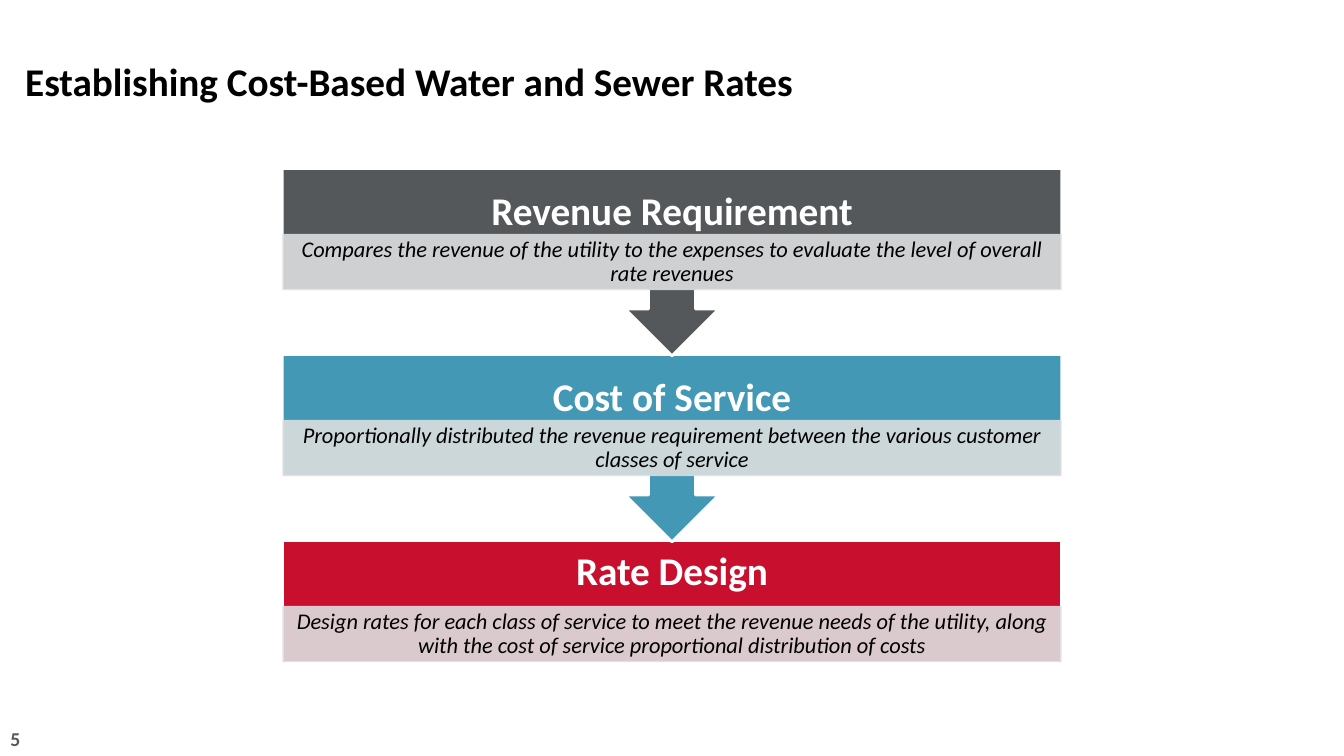
from lxml.etree import SubElement
from pptx import Presentation
from pptx.dml.color import RGBColor
from pptx.enum.shapes import MSO_SHAPE
from pptx.enum.text import MSO_ANCHOR, PP_ALIGN
from pptx.oxml.ns import qn
from pptx.util import Inches, Pt

COLORS = {
    "black": "000000",
    "white": "FFFFFF",
    "gray": "54585A",
    "blue": "4298B5",
    "red": "C8102E",
    "panel": "DCDEDF",
}

STEPS = [
    ("Revenue Requirement", "gray",
     "Compares the revenue of the utility to the expenses to evaluate "
     "the level of overall rate revenues"),
    ("Cost of Service", "blue",
     "Proportionally distributed the revenue requirement between the "
     "various customer classes of service"),
    ("Rate Design", "red",
     "Design rates for each class of service to meet the revenue needs of "
     "the utility, along with the cost of service proportional "
     "distribution of costs"),
]

LEFT, WIDTH = 2.8, 7.73
FIRST_TOP, LAST_TOP = 1.67, 5.36
PITCH = (LAST_TOP - FIRST_TOP) / (len(STEPS) - 1)
BAND_HEIGHT, CALLOUT_HEIGHT = 1.21, 1.86
PANEL_OFFSET, PANEL_HEIGHT = 0.65, 0.56
CALLOUT_HEADING_OFFSET = 0.23

TITLE = {"size": Pt(28), "bold": True, "color": "black"}
HEADING = {"size": Pt(28), "bold": True, "color": "white"}
DESCRIPTION = {"size": Pt(16), "italic": True, "color": "black"}
PAGE_NUMBER = {"size": Pt(14), "bold": True, "color": "gray"}


def rgb(name):
    return RGBColor.from_string(COLORS[name])


def add_text(slide, box, text, style, align=PP_ALIGN.CENTER,
             anchor=MSO_ANCHOR.MIDDLE, margins=(0.12, 0.02),
             spacing=0.9, wrap=True):
    frame = slide.shapes.add_textbox(*map(Inches, box)).text_frame
    side, edge = map(Inches, margins)
    layout = {"word_wrap": wrap, "vertical_anchor": anchor,
              "margin_left": side, "margin_right": side,
              "margin_top": edge, "margin_bottom": edge}
    for attribute, value in layout.items():
        setattr(frame, attribute, value)
    paragraph = frame.paragraphs[0]
    paragraph.alignment = align
    paragraph.line_spacing = spacing
    run = paragraph.add_run()
    run.text = text
    for attribute, value in {"name": "Calibri", **style}.items():
        if attribute == "color":
            run.font.color.rgb = rgb(value)
        else:
            setattr(run.font, attribute, value)


def add_block(slide, kind, box, color):
    block = slide.shapes.add_shape(kind, *map(Inches, box))
    block.shadow.inherit = False
    block.fill.solid()
    block.fill.fore_color.rgb = rgb(color)
    return block


def outline_white(block):
    block.line.color.rgb = rgb("white")
    block.line.width = Pt(2)


def add_panel(slide, box):
    """Add a 90% opaque strip that lets the step colour tint it."""
    panel = add_block(slide, MSO_SHAPE.RECTANGLE, box, "panel")
    panel.line.fill.background()
    tint = panel.fill._xPr.find(qn("a:solidFill"))[0]
    SubElement(tint, qn("a:alpha"), val="90000")


def add_step(slide, top, heading, color, description, is_last):
    if is_last:
        band = add_block(slide, MSO_SHAPE.RECTANGLE,
                         (LEFT, top, WIDTH, BAND_HEIGHT), color)
        heading_top = top
    else:
        band = add_block(slide, MSO_SHAPE.UP_ARROW_CALLOUT,
                         (LEFT, top, WIDTH, CALLOUT_HEIGHT), color)
        band.rotation = 180
        heading_top = top + CALLOUT_HEADING_OFFSET
    outline_white(band)
    panel_top = top + PANEL_OFFSET
    add_text(slide, (LEFT, heading_top, WIDTH, panel_top - heading_top),
             heading, HEADING, margins=(0.22, 0))
    panel_box = (LEFT, panel_top, WIDTH, PANEL_HEIGHT)
    add_panel(slide, panel_box)
    add_text(slide, panel_box, description, DESCRIPTION)


def main():
    deck = Presentation()
    deck.slide_width, deck.slide_height = Inches(13.33), Inches(7.5)
    slide = deck.slides.add_slide(deck.slide_layouts[6])

    add_text(slide, (0, 0, 13.33, 1.08),
             "Establishing Cost-Based Water and Sewer Rates", TITLE,
             align=PP_ALIGN.LEFT, anchor=MSO_ANCHOR.BOTTOM,
             margins=(0.25, 0.05), spacing=Pt(26))

    # Later steps go underneath, so each arrow tip stays on top.
    for index, step in reversed(list(enumerate(STEPS))):
        add_step(slide, FIRST_TOP + index * PITCH, *step,
                 is_last=index == len(STEPS) - 1)

    add_text(slide, (0, 7.16, 0.3, 0.34), "5", PAGE_NUMBER,
             align=PP_ALIGN.RIGHT, anchor=MSO_ANCHOR.TOP,
             margins=(0.1, 0.05), spacing=1.0, wrap=False)
    deck.save("out.pptx")


if __name__ == "__main__":
    main()
